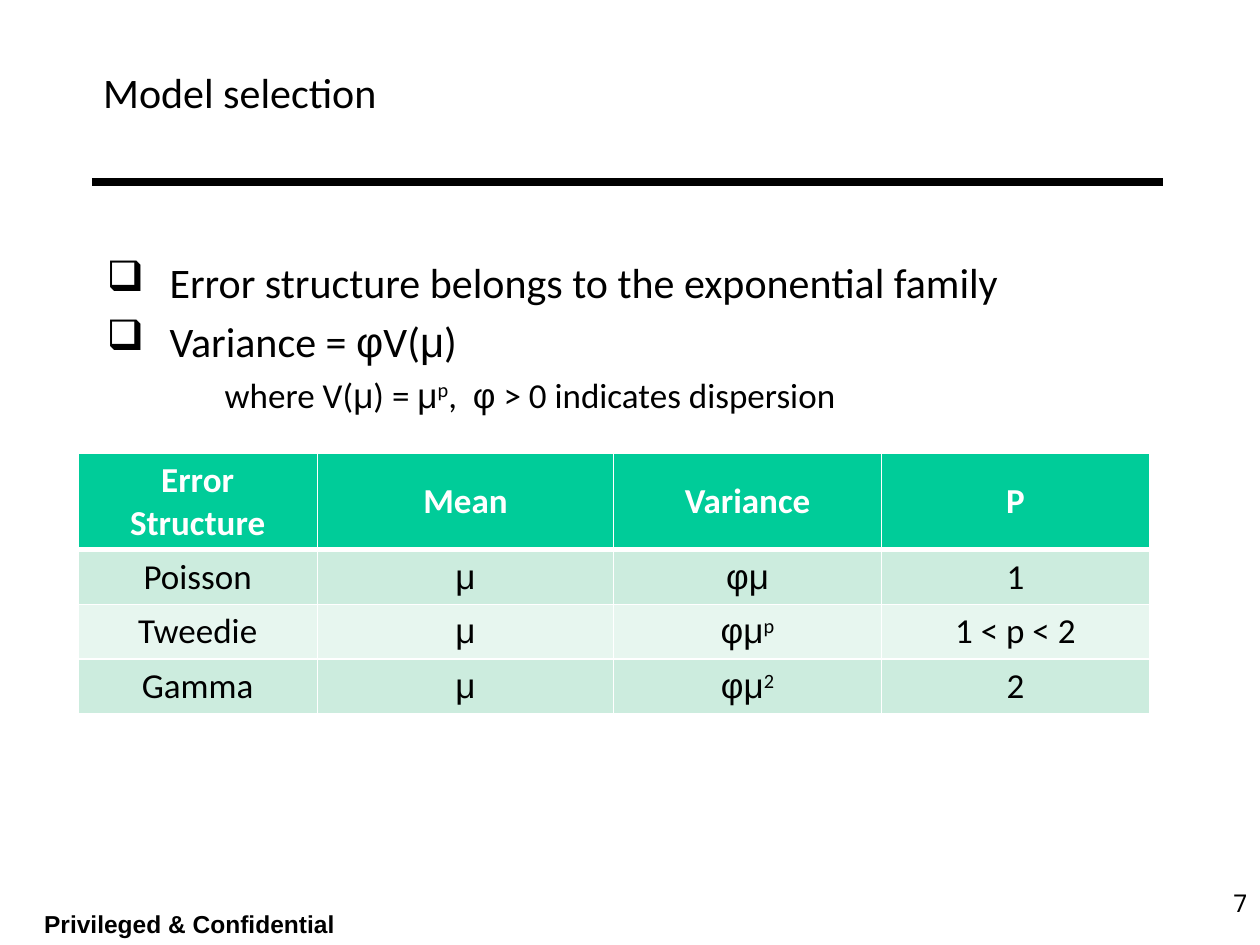
from itertools import groupby

from lxml import etree
from pptx import Presentation
from pptx.dml.color import RGBColor
from pptx.enum.shapes import MSO_CONNECTOR
from pptx.enum.text import MSO_ANCHOR, PP_ALIGN
from pptx.oxml.ns import qn
from pptx.util import Cm, Pt

MIDDLE, TOP = MSO_ANCHOR.MIDDLE, MSO_ANCHOR.TOP
LEFT, CENTER, RIGHT = PP_ALIGN.LEFT, PP_ALIGN.CENTER, PP_ALIGN.RIGHT
BLACK = RGBColor(0x00, 0x00, 0x00)
WHITE = RGBColor(0xFF, 0xFF, 0xFF)
GREEN = RGBColor(0x00, 0xCC, 0x99)
BANDS = (RGBColor(0xCC, 0xEC, 0xDE), RGBColor(0xE7, 0xF6, 0xEF))

TITLE = "Model selection"
FOOTER = "Privileged & Confidential"
PAGE_NUMBER = "7"
# text, size, left margin, hanging indent, bullet, space before
POINTS = [
    ("Error structure belongs to the exponential family", 24, 1.27, -1.27, "❑", 0),
    ("Variance = φV(μ)", 24, 1.27, -1.27, "❑", 5),
    ("where V(μ) = μᵖ,  φ > 0 indicates dispersion", 20, 2.38, 0, None, 4),
]
TABLE = [
    ("Error Structure", "Mean", "Variance", "P"),
    ("Poisson", "μ", "φμ", "1"),
    ("Tweedie", "μ", "φμᵖ", "1 < p < 2"),
    ("Gamma", "μ", "φμ²", "2"),
]
COLUMN_WIDTHS = (4.83, 5.97, 5.4, 5.4)
HEADER_HEIGHT, ROW_HEIGHT = 1.94, 1.1
GREEK = "φμ"
RAISED = {"ᵖ": "p", "²": "2"}


def write_formula(para, text, size, color=BLACK, bold=False):
    """Write text with Greek letters in Arial and raised signs as superscript runs."""
    for (greek, raised), chars in groupby(text, lambda c: (c in GREEK, c in RAISED)):
        span = para.add_run()
        span.text = "".join(RAISED.get(char, char) for char in chars)
        span.font.name = "Arial" if greek else "Calibri"
        span.font.size = Pt(size)
        span.font.bold = bold
        span.font.color.rgb = color
        if raised:
            span.font._element.set("baseline", "30000")


def add_box(page, left, top, width, height, anchor=TOP):
    box = page.shapes.add_textbox(Cm(left), Cm(top), Cm(width), Cm(height))
    box.text_frame.word_wrap = True
    box.text_frame.vertical_anchor = anchor
    return box.text_frame


def add_label(page, place, text, font, size, bold=False, align=LEFT, anchor=TOP):
    para = add_box(page, *place, anchor).paragraphs[0]
    para.text = text
    para.alignment = align
    para.font.name = font
    para.font.size = Pt(size)
    para.font.bold = bold
    para.font.color.rgb = BLACK


def add_rule(page):
    rule = page.shapes.add_connector(
        MSO_CONNECTOR.STRAIGHT, Cm(1.85), Cm(3.66), Cm(23.44), Cm(3.66))
    rule.line.color.rgb = BLACK
    rule.line.width = Pt(4.5)
    etree.SubElement(rule._element.spPr, qn("a:effectLst"))


def add_points(page):
    frame = add_box(page, 1.9, 5.05, 21.6, 5)
    for index, (text, size, margin, indent, bullet, before) in enumerate(POINTS):
        para = frame.add_paragraph() if index else frame.paragraphs[0]
        props = para._p.get_or_add_pPr()
        props.set("marL", str(Cm(margin)))
        props.set("indent", str(Cm(indent)))
        if bullet:
            etree.SubElement(props, qn("a:buChar"), char=bullet)
        para.space_before = Pt(before)
        write_formula(para, text, size)


def set_borders(cell, widths):
    """Draw white borders; the widths are left, right, top and bottom in points."""
    props = cell._tc.get_or_add_tcPr()
    for index, (side, width) in enumerate(zip("LRTB", widths)):
        line = etree.Element(qn(f"a:ln{side}"), w=str(Pt(width)))
        fill = etree.SubElement(line, qn("a:solidFill"))
        etree.SubElement(fill, qn("a:srgbClr"), val=str(WHITE))
        props.insert(index, line)


def add_error_table(page):
    height = HEADER_HEIGHT + ROW_HEIGHT * (len(TABLE) - 1)
    table = page.shapes.add_table(
        len(TABLE), len(COLUMN_WIDTHS), Cm(1.57), Cm(9.13),
        Cm(sum(COLUMN_WIDTHS)), Cm(height)).table
    for column, width in zip(table.columns, COLUMN_WIDTHS):
        column.width = Cm(width)
    for index, texts in enumerate(TABLE):
        header = index == 0
        table.rows[index].height = Cm(HEADER_HEIGHT if header else ROW_HEIGHT)
        for cell, text in zip(table.rows[index].cells, texts):
            cell.fill.solid()
            cell.fill.fore_color.rgb = GREEN if header else BANDS[(index - 1) % 2]
            cell.vertical_anchor = MIDDLE
            set_borders(cell, (1, 1, 3 if index == 1 else 1, 3 if header else 1))
            para = cell.text_frame.paragraphs[0]
            para.alignment = CENTER
            write_formula(para, text, 20, WHITE if header else BLACK, header)


def main():
    deck = Presentation()
    deck.slide_width, deck.slide_height = Cm(25.4), Cm(19.05)
    page = deck.slides.add_slide(deck.slide_layouts[6])
    add_label(page, (0.64, 18.21, 7.2, 0.84), FOOTER, "Arial", 14, bold=True)
    add_rule(page)
    add_label(page, (1.83, 0, 18.64, 3.71), TITLE, "Calibri", 24, anchor=MIDDLE)
    add_label(page, (20.12, 17.78, 5.28, 1.27), PAGE_NUMBER, "Noto Sans Mono", 14,
              align=RIGHT)
    add_points(page)
    add_error_table(page)
    deck.save("out.pptx")


if __name__ == "__main__":
    main()
